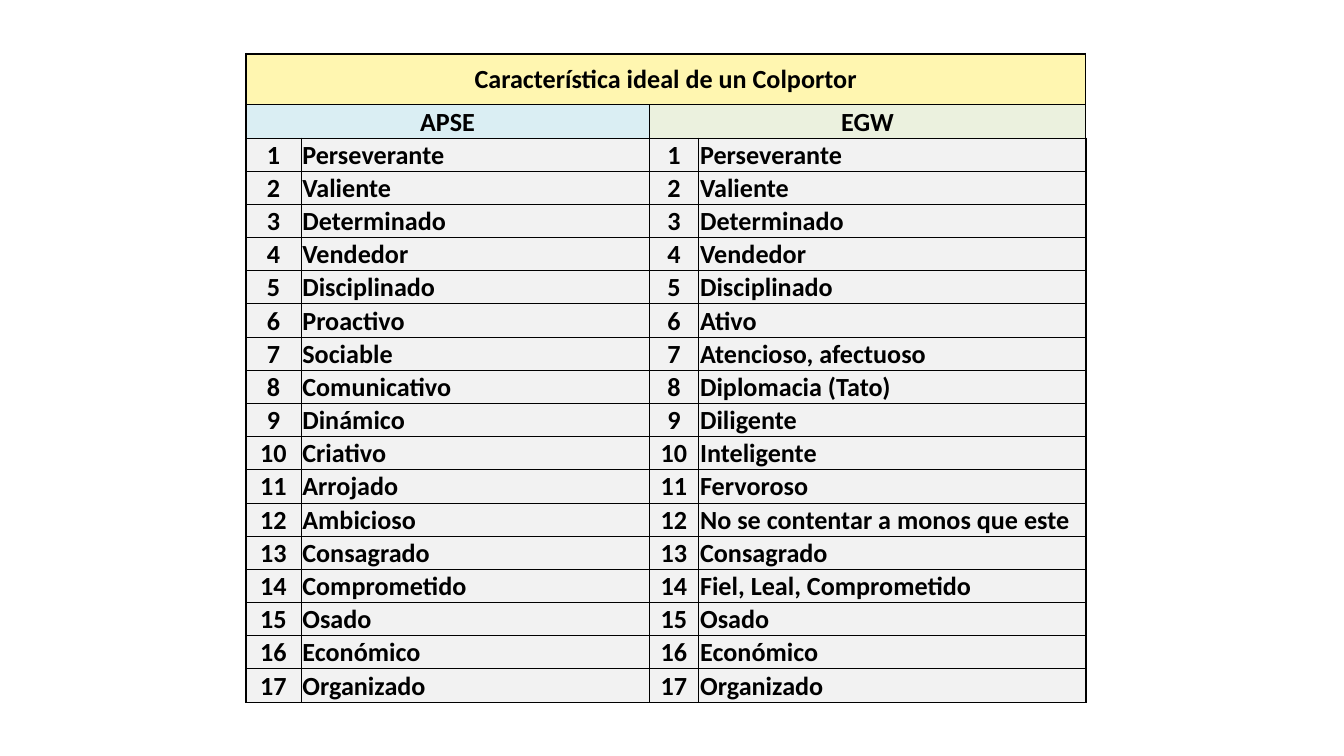
import pptx
import pptx.dml.color
import pptx.enum.text
import pptx.oxml.ns
import pptx.util
from lxml import etree

Inches = pptx.util.Inches
Pt = pptx.util.Pt
ALIGN = pptx.enum.text.PP_ALIGN
ANCHOR = pptx.enum.text.MSO_ANCHOR

COLORS = {
    "ink": "000000",
    "title": "FFF6B0",
    "apse": "DAEEF3",
    "egw": "EBF1DE",
    "trait": "F2F2F2",
}
COLUMN_WIDTHS = [0.41, 2.59, 0.37, 2.88]
TITLE_HEIGHT, ROW_HEIGHT = 0.38, 0.24
HEADER_ROWS = 2

TRAITS = [
    ("Perseverante", "Perseverante"),
    ("Valiente", "Valiente"),
    ("Determinado", "Determinado"),
    ("Vendedor", "Vendedor"),
    ("Disciplinado", "Disciplinado"),
    ("Proactivo", "Ativo"),
    ("Sociable", "Atencioso, afectuoso"),
    ("Comunicativo", "Diplomacia (Tato)"),
    ("Dinámico", "Diligente"),
    ("Criativo", "Inteligente"),
    ("Arrojado", "Fervoroso"),
    ("Ambicioso", "No se contentar a monos que este"),
    ("Consagrado", "Consagrado"),
    ("Comprometido", "Fiel, Leal, Comprometido"),
    ("Osado", "Osado"),
    ("Económico", "Económico"),
    ("Organizado", "Organizado"),
]


def rgb(name):
    return pptx.dml.color.RGBColor.from_string(COLORS[name])


def set_borders(cell, widths):
    """Draw the cell edges; widths maps L, R, T, B to points."""
    properties = cell._tc.get_or_add_tcPr()
    qn = pptx.oxml.ns.qn
    for side, width in widths.items():
        edge = etree.SubElement(properties, qn(f"a:ln{side}"), w=str(Pt(width)))
        fill = etree.SubElement(edge, qn("a:solidFill"))
        etree.SubElement(fill, qn("a:srgbClr"), val=COLORS["ink"])


def style_cell(cell, row, column, color):
    last_column = len(COLUMN_WIDTHS) - 1
    set_borders(cell, {
        "L": 1 if column == 0 else 0.5,
        "R": 1 if column == last_column else 0.5,
        "T": 1 if row == 0 else 0.5,
        "B": 0.5,
    })
    cell.fill.solid()
    cell.fill.fore_color.rgb = rgb(color)
    cell.margin_left = cell.margin_right = cell.margin_top = Inches(0.01)
    cell.margin_bottom = 0
    cell.vertical_anchor = ANCHOR.MIDDLE if row < HEADER_ROWS else ANCHOR.BOTTOM


def write_cell(cell, text, align=ALIGN.CENTER):
    paragraph = cell.text_frame.paragraphs[0]
    paragraph.alignment = align
    run = paragraph.add_run()
    run.text = text
    run.font.name = "Calibri"
    run.font.size = Pt(14)
    run.font.bold = True
    run.font.color.rgb = rgb("ink")


def write_heading(table, row, columns, text, color):
    """Merge the cells from the first to the last column into one heading."""
    first, last = columns
    for column in range(first, last + 1):
        style_cell(table.cell(row, column), row, column, color)
    table.cell(row, first).merge(table.cell(row, last))
    write_cell(table.cell(row, first), text)


def write_traits(table):
    for number, pair in enumerate(TRAITS, start=1):
        row = number + HEADER_ROWS - 1
        for side, trait in enumerate(pair):
            number_column = 2 * side
            trait_column = number_column + 1
            for column in (number_column, trait_column):
                style_cell(table.cell(row, column), row, column, "trait")
            write_cell(table.cell(row, number_column), str(number))
            write_cell(table.cell(row, trait_column), trait, ALIGN.LEFT)


def add_traits_table(slide):
    row_heights = [TITLE_HEIGHT] + [ROW_HEIGHT] * (len(TRAITS) + 1)
    table = slide.shapes.add_table(
        len(row_heights), len(COLUMN_WIDTHS), Inches(1.83), Inches(0.4),
        Inches(sum(COLUMN_WIDTHS)), Inches(sum(row_heights))).table
    table.first_row = table.horz_banding = False
    for column, width in zip(table.columns, COLUMN_WIDTHS):
        column.width = Inches(width)
    for row, height in zip(table.rows, row_heights):
        row.height = Inches(height)
    write_heading(table, 0, (0, 3), "Característica ideal de un Colportor", "title")
    write_heading(table, 1, (0, 1), "APSE", "apse")
    write_heading(table, 1, (2, 3), "EGW", "egw")
    write_traits(table)


def main():
    presentation = pptx.Presentation()
    presentation.slide_width = Inches(10)
    presentation.slide_height = Inches(10) * 9 // 16
    slide = presentation.slides.add_slide(presentation.slide_layouts[6])
    add_traits_table(slide)
    presentation.save("out.pptx")


if __name__ == "__main__":
    main()
